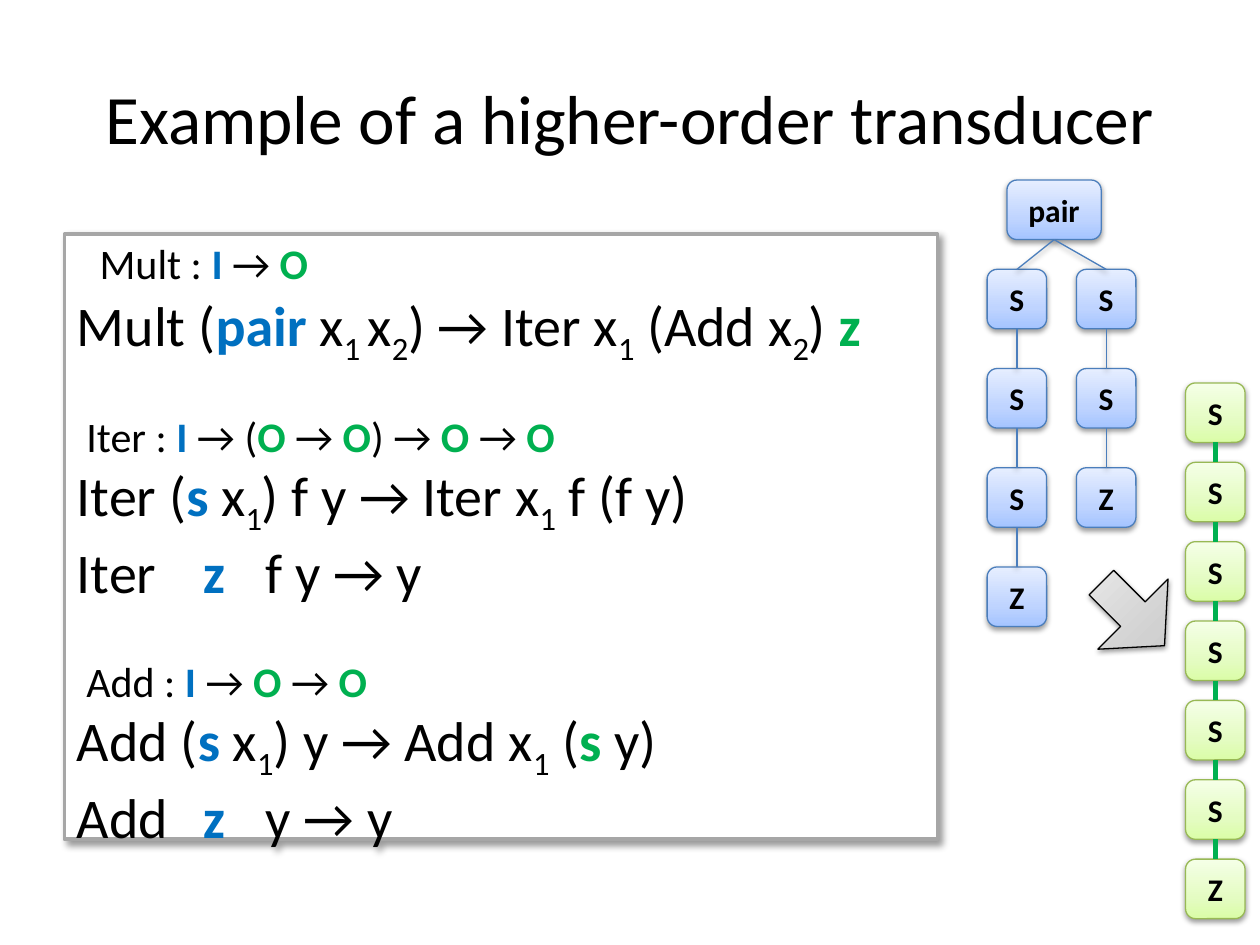
from copy import deepcopy

from pptx import Presentation
from pptx.dml.color import RGBColor
from pptx.enum.shapes import MSO_CONNECTOR as Connector, MSO_SHAPE as Shape
from pptx.enum.text import MSO_ANCHOR as Anchor, PP_ALIGN as Align
from pptx.oxml import parse_xml
from pptx.oxml.ns import nsdecls, qn
from pptx.util import Inches, Pt

BLACK = RGBColor(0x00, 0x00, 0x00)
WHITE = RGBColor(0xFF, 0xFF, 0xFF)
GRAY = RGBColor(0xA6, 0xA6, 0xA6)
INPUT_BLUE = RGBColor(0x00, 0x70, 0xC0)
OUTPUT_GREEN = RGBColor(0x00, 0xB0, 0x50)
BLUE_EDGE = RGBColor(0x4B, 0x7E, 0xBC)
GREEN_EDGE = RGBColor(0x98, 0xB9, 0x55)
BLUE_FADE = [RGBColor(0xA4, 0xC4, 0xFF), RGBColor(0xBF, 0xD4, 0xFF), RGBColor(0xE6, 0xEE, 0xFF)]
GREEN_FADE = [RGBColor(0xDA, 0xFD, 0xA7), RGBColor(0xE4, 0xFC, 0xC2), RGBColor(0xF5, 0xFF, 0xE7)]
GRAY_FADE = [RGBColor(0xBD, 0xBD, 0xBD), RGBColor(0xD1, 0xD1, 0xD1), RGBColor(0xEE, 0xEE, 0xEE)]
FONT = "Calibri"

presentation = Presentation()
presentation.slide_width, presentation.slide_height = Inches(10), Inches(7.5)
WIDTH, HEIGHT = presentation.slide_width, presentation.slide_height
CELL = WIDTH / 127  # square grid: a node covers 6 by 6 cells
NODE = 6
slide = presentation.slides.add_slide(presentation.slide_layouts[5])


def set_shadow(shape, opacity=38, blur=3.1, distance=1.6, angle=90):
    """Give a shape or connector an outer shadow; call after its line is set."""
    shape._element.spPr.append(parse_xml(
        f'<a:effectLst {nsdecls("a")}><a:outerShdw blurRad="{Pt(blur)}" dist="{Pt(distance)}" '
        f'dir="{angle * 60000}" algn="ctr" rotWithShape="0"><a:srgbClr val="000000">'
        f'<a:alpha val="{opacity * 1000}"/></a:srgbClr></a:outerShdw></a:effectLst>'))


def add_faded_shape(kind, column, row, columns, rows, fade, edge):
    """Add a preset shape with a three-stop vertical gradient, placed in grid cells."""
    shape = slide.shapes.add_shape(
        kind, *(int(cells * CELL) for cells in (column, row, columns, rows)))
    shape.fill.gradient()
    shape.fill.gradient_angle = 90
    stops = shape._element.spPr.find(".//" + qn("a:gsLst"))
    stops.insert(1, deepcopy(stops[0]))
    for stop, position, color in zip(shape.fill.gradient_stops, (0, 0.35, 1), fade):
        stop.position = position
        stop.color.rgb = color
    shape.line.color.rgb = edge
    shape.line.width = Pt(0.75)
    set_shadow(shape)
    return shape


# Title
title = slide.shapes.title
title.left, title.top = int(WIDTH * 0.05), int(HEIGHT * 0.04)
title.width, title.height = int(WIDTH * 0.9), int(HEIGHT / 6)
title.text_frame.text = "Example of a higher-order transducer"
title.text_frame.vertical_anchor = Anchor.MIDDLE
title_paragraph = title.text_frame.paragraphs[0]
title_paragraph.alignment = Align.CENTER
title_font = title_paragraph.runs[0].font
title_font.name, title_font.size, title_font.color.rgb = FONT, Pt(39.6), BLACK

# Rules: pieces are parted by "|"; ^ marks input symbols, ~ output symbols, _ subscripts
rules_box = slide.shapes.add_shape(
    Shape.RECTANGLE, *(int(cells * CELL) for cells in (6.5, 23.6, 88, 61)))
rules_box.fill.solid()
rules_box.fill.fore_color.rgb = WHITE
rules_box.line.color.rgb = GRAY
rules_box.line.width = Pt(2)
set_shadow(rules_box, 40, 4, 3, 45)

# size, space before, left margin and tab stops in inches, text
RULES = [
    (24, 0, 0.08, [], " |Mult : |^I |→ |~O"),
    (32, 0, 0, [], "Mult (|^pair |x|_1 |x|_2|) → Iter x|_1| (Add x|_2|) |~z"),
    (24, 24.4, 0, [], " Iter : |^I |→ (|~O |→ |~O|) → |~O |→ |~O"),
    (32, 0, 0, [], "Iter (|^s |x|_1|) f y → Iter x|_1| f (f y)"),
    (32, 0, 0, [0.83, 1.71], "Iter\t|^z|\tf y → y"),
    (24, 29.3, 0, [], " Add : |^I |→ |~O |→ |~O"),
    (32, 0, 0, [], "Add (|^s |x|_1|) y → Add x|_1| (|~s |y)"),
    (32, 0, 0, [0.93, 1.81], "Add\t|^z|\ty → y"),
]
text_frame = rules_box.text_frame
text_frame.word_wrap = True
text_frame.vertical_anchor = Anchor.MIDDLE
for index, (size, space, margin, tabs, text) in enumerate(RULES):
    paragraph = text_frame.add_paragraph() if index else text_frame.paragraphs[0]
    paragraph.alignment = Align.LEFT
    paragraph.space_before = Pt(space)
    properties = paragraph._p.get_or_add_pPr()
    properties.set("marL", str(Inches(margin)))
    properties.set("indent", "0")
    if tabs:
        stops = "".join(f'<a:tab pos="{Inches(tab)}" algn="l"/>' for tab in tabs)
        properties.append(parse_xml(f'<a:tabLst {nsdecls("a")}>{stops}</a:tabLst>'))
    for piece in text.split("|"):
        mark = piece[0] if piece[0] in "^~_" else ""
        run = paragraph.add_run()
        run.text = piece[len(mark):]
        run.font.name = FONT
        run.font.size = Pt(32 if piece == " " else size)
        run.font.bold = mark in ("^", "~")
        run.font.color.rgb = {"^": INPUT_BLUE, "~": OUTPUT_GREEN}.get(mark, BLACK)
        if mark == "_":
            run.font._element.set("baseline", "-25000")

# Trees: root cell, then chains of nodes hanging down at an equal pitch
ROOT_COLUMN, ROOT_ROW, ROOT_WIDTH = 101.5, 18.15, 9.5
ROOT_BOTTOM = (ROOT_COLUMN + ROOT_WIDTH / 2, ROOT_ROW + NODE)
BLUE = (BLUE_FADE, BLUE_EDGE)
GREEN = (GREEN_FADE, GREEN_EDGE)
CHAINS = [  # labels, column, first row, pitch, node style
    ("SSSZ", 99.5, 27.15, 10, BLUE),
    ("SSZ", 108.5, 27.15, 10, BLUE),
    ("SSSSSSZ", 119.5, 38.6, 8, GREEN),
]
nodes = [("pair", ROOT_COLUMN, ROOT_ROW, ROOT_WIDTH, BLUE)]
edges = []
for labels, column, first_row, pitch, style in CHAINS:
    center = column + NODE / 2
    if style is BLUE:
        edges.append((*ROOT_BOTTOM, center, first_row, style))
    for index, label in enumerate(labels):
        row = first_row + index * pitch
        nodes.append((label, column, row, NODE, style))
        if index:
            edges.append((center, row - pitch + NODE, center, row, style))

for label, column, row, columns, (fade, edge_color) in nodes:
    node = add_faded_shape(Shape.ROUNDED_RECTANGLE, column, row, columns, NODE, fade, edge_color)
    node.text_frame.text = label
    node.text_frame.vertical_anchor = Anchor.MIDDLE
    paragraph = node.text_frame.paragraphs[0]
    paragraph.alignment = Align.CENTER
    font = paragraph.runs[0].font
    font.name, font.size, font.bold, font.color.rgb = FONT, Pt(18), True, BLACK

for *ends, style in edges:
    edge = slide.shapes.add_connector(Connector.STRAIGHT, *(int(cells * CELL) for cells in ends))
    if style is BLUE:
        edge.line.color.rgb, edge.line.width = BLUE_EDGE, Pt(0.75)
        set_shadow(edge)
    else:
        edge.line.color.rgb, edge.line.width = OUTPUT_GREEN, Pt(3)
        edge._element.spPr.append(parse_xml(f'<a:effectLst {nsdecls("a")}/>'))

# Arrow from the input tree to the output tree
arrow = add_faded_shape(Shape.DOWN_ARROW, 109.2, 57.4, 10, 9, GRAY_FADE, BLACK)
arrow.rotation = 315
arrow.adjustments[0] = 0.35

presentation.save("out.pptx")
